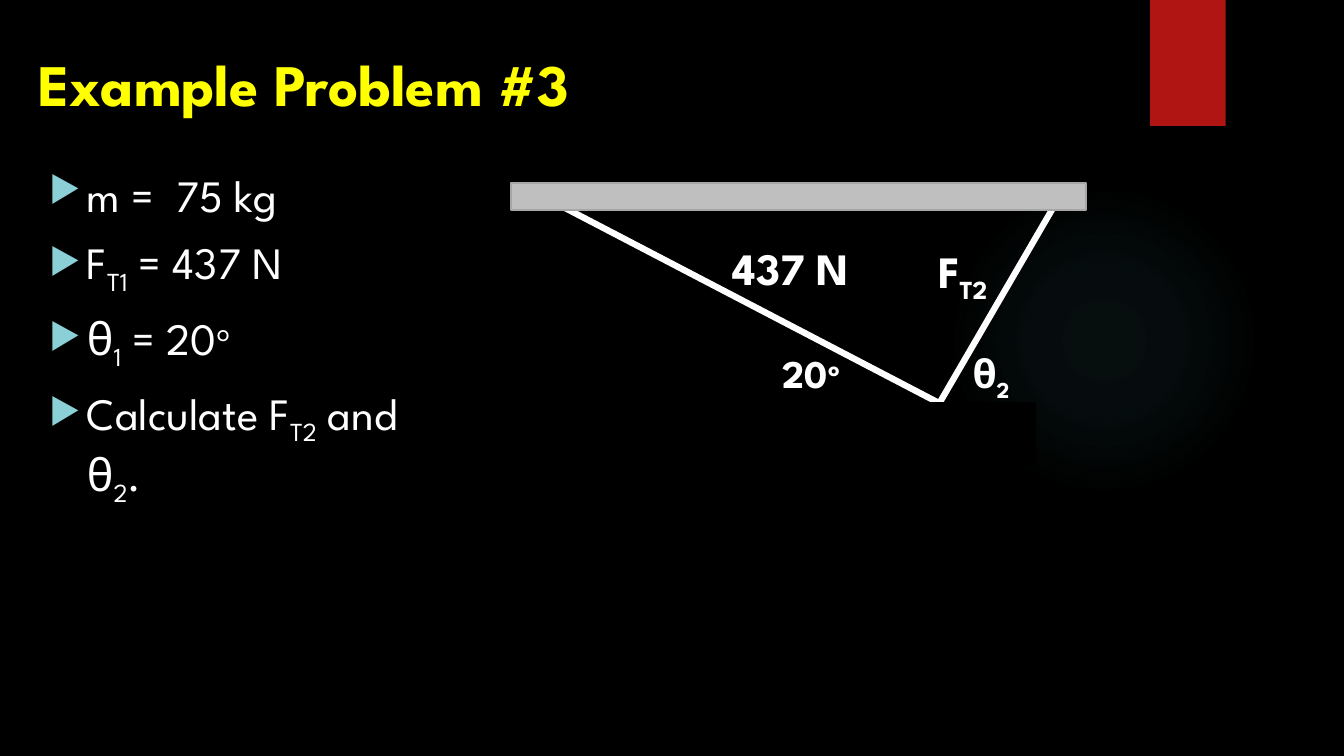
from dataclasses import dataclass

from lxml import etree
from pptx import Presentation
from pptx.dml.color import RGBColor
from pptx.enum.shapes import MSO_CONNECTOR, MSO_SHAPE
from pptx.enum.text import MSO_ANCHOR, MSO_AUTO_SIZE, PP_ALIGN
from pptx.oxml.ns import qn
from pptx.util import Pt

RECTANGLE, OVAL = MSO_SHAPE.RECTANGLE, MSO_SHAPE.OVAL
STRAIGHT = MSO_CONNECTOR.STRAIGHT
LEFT = PP_ALIGN.LEFT
TOP, MIDDLE = MSO_ANCHOR.TOP, MSO_ANCHOR.MIDDLE
FIT_SHAPE, NO_FIT = MSO_AUTO_SIZE.SHAPE_TO_FIT_TEXT, MSO_AUTO_SIZE.NONE
SUB, SUP = -25000, 30000
TOP_SIDE = 0


@dataclass(frozen=True)
class Theme:
    font: str = "League Spartan"
    background: str = "000000"
    text: str = "FFFFFF"
    title: str = "FFFF00"
    bullet: str = "8AD0D6"
    glow: str = "50B9C1"
    ribbon: str = "B01513"
    ceiling: str = "BFBFBF"
    ceiling_edge: str = "A6A6A6"
    title_size: int = 42
    body_size: int = 32
    angle_size: int = 28
    edge_width: float = 1.5
    rope_width: float = 4.5


class SlideBuilder:
    def __init__(self, slide, theme):
        self.slide = slide
        self.shapes = slide.shapes
        self.theme = theme
        slide.background.fill.solid()
        slide.background.fill.fore_color.rgb = RGBColor.from_string(theme.background)

    def style(self, paragraph, size, color, bold):
        paragraph.alignment = LEFT
        font = paragraph.font
        font.name, font.size, font.bold = self.theme.font, Pt(size), bold
        font.color.rgb = RGBColor.from_string(color)

    def add_pieces(self, paragraph, pieces):
        """Add runs; a piece is a string or a (string, baseline) pair."""
        for piece in pieces:
            text, baseline = (piece, 0) if isinstance(piece, str) else piece
            run = paragraph.add_run()
            run.text = text
            if baseline:
                run._r.get_or_add_rPr().set("baseline", str(baseline))

    def title(self, box, text):
        title = self.shapes.title
        title.left, title.top, title.width, title.height = map(Pt, box)
        frame = title.text_frame
        frame.text = text
        frame.auto_size, frame.vertical_anchor = NO_FIT, MIDDLE
        self.style(frame.paragraphs[0], self.theme.title_size, self.theme.title, True)

    def block(self, box, kind, fill, edge=None):
        shape = self.shapes.add_shape(kind, *map(Pt, box))
        shape.shadow.inherit = False
        shape.fill.solid()
        shape.fill.fore_color.rgb = RGBColor.from_string(fill)
        if edge:
            shape.line.color.rgb = RGBColor.from_string(edge)
            shape.line.width = Pt(self.theme.edge_width)
        else:
            shape.line.fill.background()
        return shape

    def glow(self, box):
        """Add a faint circle that fades out from its centre."""
        properties = self.block(box, OVAL, self.theme.glow)._element.spPr
        gradient = etree.Element(qn("a:gradFill"), rotWithShape="1")
        stops = etree.SubElement(gradient, qn("a:gsLst"))
        for position, alpha in ((0, 7), (36, 6), (69, 0)):
            stop = etree.SubElement(stops, qn("a:gs"), pos=str(position * 1000))
            color = etree.SubElement(stop, qn("a:srgbClr"), val=self.theme.glow)
            etree.SubElement(color, qn("a:alpha"), val=str(alpha * 1000))
        circle = etree.SubElement(gradient, qn("a:path"), path="circle")
        etree.SubElement(circle, qn("a:fillToRect"),
                         {side: "50000" for side in "ltrb"})
        properties.replace(properties.find(qn("a:solidFill")), gradient)

    def rope(self, start, end, load, support):
        """Join a point to the top of the load, drawn behind the support."""
        rope = self.shapes.add_connector(STRAIGHT, *map(Pt, start + end))
        rope.end_connect(load, TOP_SIDE)
        rope.line.color.rgb = RGBColor.from_string(self.theme.text)
        rope.line.width = Pt(self.theme.rope_width)
        etree.SubElement(rope._element.spPr, qn("a:effectLst"))
        support._element.addprevious(rope._element)

    def label(self, box, pieces, size, wrap=True):
        frame = self.shapes.add_textbox(*map(Pt, box)).text_frame
        frame.word_wrap, frame.auto_size = wrap, FIT_SHAPE
        self.add_pieces(frame.paragraphs[0], pieces)
        self.style(frame.paragraphs[0], size, self.theme.text, True)

    def bullets(self, box, items):
        frame = self.shapes.add_textbox(*map(Pt, box)).text_frame
        frame.word_wrap, frame.vertical_anchor = True, TOP
        for index, pieces in enumerate(items):
            paragraph = frame.paragraphs[0] if index == 0 else frame.add_paragraph()
            if index:
                paragraph.space_before = Pt(10)
            properties = paragraph._p.get_or_add_pPr()
            properties.set("marL", str(Pt(27)))
            properties.set("indent", str(-Pt(27)))
            color = etree.SubElement(properties, qn("a:buClr"))
            etree.SubElement(color, qn("a:srgbClr"), val=self.theme.bullet)
            etree.SubElement(properties, qn("a:buSzPct"), val="80000")
            etree.SubElement(properties, qn("a:buChar"), char="▶")
            self.add_pieces(paragraph, pieces)
            self.style(paragraph, self.theme.body_size, self.theme.text, False)


def main():
    theme = Theme()
    deck = Presentation()
    deck.slide_width, deck.slide_height = Pt(960), Pt(540)
    page = SlideBuilder(deck.slides.add_slide(deck.slide_layouts[5]), theme)

    page.glow((677.5, 131.8, 221.8, 221.8))
    page.block((821.5, 0, 54, 90), RECTANGLE, theme.ribbon)
    page.title((20, 24.5, 458, 69), "Example Problem #3")
    page.bullets((28, 116, 283, 250.5), [
        ["m =  75 kg"],
        ["F", ("T1", SUB), " = 437 N"],
        ["θ", ("1", SUB), " = 20", ("o", SUP)],
        ["Calculate F", ("T2", SUB), " and θ", ("2", SUB), "."],
    ])

    ceiling = page.block((365, 131, 411, 19), RECTANGLE,
                         theme.ceiling, theme.ceiling_edge)
    load = page.block((603, 288, 136, 44), RECTANGLE,
                      theme.background, theme.background)
    for ceiling_point in ((388, 140.4), (754, 145.4)):
        page.rope(ceiling_point, (671, 288), load, ceiling)

    page.label((516, 168.5, 105, 46), ["437 N"], theme.body_size)
    page.label((552, 246, 58.5, 41), ["20", ("o", SUP)], theme.angle_size)
    page.label((663, 170.6, 58.5, 46), ["F", ("T2", SUB)], theme.body_size)
    page.label((687.6, 246, 47.5, 41), ["θ", ("2", SUB)], theme.angle_size, wrap=False)

    deck.save("out.pptx")


if __name__ == "__main__":
    main()
